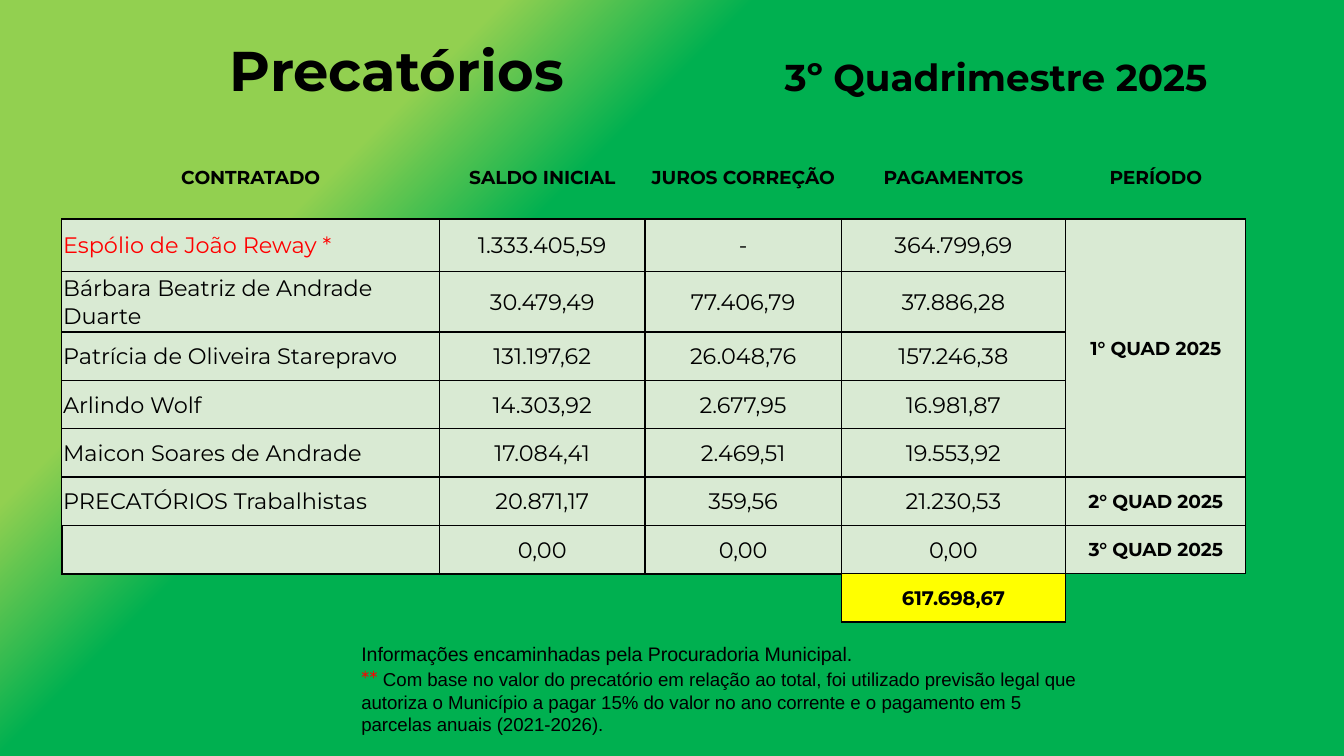
from dataclasses import dataclass

from lxml import etree
from pptx import Presentation
from pptx.dml.color import RGBColor
from pptx.enum.text import MSO_ANCHOR as Anchor, PP_ALIGN as Align
from pptx.oxml.ns import qn
from pptx.util import Inches, Pt


@dataclass(frozen=True)
class Theme:
    lime: str = "92D050"
    green: str = "00B050"
    ink: str = "000000"
    red: str = "FF0000"
    cell: str = "D9EAD3"
    total: str = "FFFF00"
    sans: str = "Montserrat"
    note_font: str = "Arial"
    title: float = 30
    subtitle: float = 20
    body: float = 12
    label: float = 10
    emphasis: float = 10.5
    mark: float = 11
    thin: float = 0.75
    thick: float = 1


THEME = Theme()
NO_STYLE = "{2D5ABB26-0587-4C30-8999-92F81FD0307C}"
COLUMN_WIDTHS = [2.81, 1.53, 1.46, 1.67, 1.34]
ROW_HEIGHTS = [0.64, 0.39, 0.45] + [0.36] * 6
ROWS = [
    ["CONTRATADO", "SALDO INICIAL", "JUROS CORREÇÃO", "PAGAMENTOS", "PERÍODO"],
    ["Espólio de João Reway *", "1.333.405,59", "-", "364.799,69", "1° QUAD 2025"],
    ["Bárbara Beatriz de Andrade Duarte", "30.479,49", "77.406,79", "37.886,28", ""],
    ["Patrícia de Oliveira Starepravo", "131.197,62", "26.048,76", "157.246,38", ""],
    ["Arlindo Wolf", "14.303,92", "2.677,95", "16.981,87", ""],
    ["Maicon Soares de Andrade", "17.084,41", "2.469,51", "19.553,92", ""],
    ["PRECATÓRIOS Trabalhistas", "20.871,17", "359,56", "21.230,53", "2° QUAD 2025"],
    ["", "0,00", "0,00", "0,00", "3° QUAD 2025"],
    ["", "", "", "617.698,67", ""],
]
NAME, BALANCE, PAYMENT, PERIOD = 0, 1, 3, 4
HEADER, FIRST, LAST_OF_FIRST_QUAD, THIRD_QUAD, TOTAL = 0, 1, 5, 7, 8


def style_run(run, size, color=THEME.ink, bold=False, font=THEME.sans):
    run.font.name = font
    run.font.size = Pt(size)
    run.font.bold = bold
    run.font.color.rgb = RGBColor.from_string(color)


def add_run(paragraph, text, size, **style):
    run = paragraph.add_run()
    run.text = text
    style_run(run, size, **style)


def add_text_frame(slide, box):
    frame = slide.shapes.add_textbox(*map(Inches, box)).text_frame
    frame.word_wrap = True
    return frame


def paint_background(slide):
    fill = slide.background.fill
    fill.gradient()
    fill.gradient_angle = 315
    stops = slide.element.find(".//" + qn("a:gsLst"))
    for stop in list(stops):
        stops.remove(stop)
    for percent, color in [(0, THEME.lime), (24, THEME.lime),
                           (36, THEME.green), (100, THEME.green)]:
        stop = etree.SubElement(stops, qn("a:gs"), pos=str(percent * 1000))
        etree.SubElement(stop, qn("a:srgbClr"), val=color)


def add_heading(slide, box):
    frame = add_text_frame(slide, box)
    frame.vertical_anchor = Anchor.BOTTOM
    heading = frame.paragraphs[0]
    tabs = etree.SubElement(heading._p.get_or_add_pPr(), qn("a:tabLst"))
    etree.SubElement(tabs, qn("a:tab"), pos=str(Inches(4.13)), algn="l")
    add_run(heading, "Precatórios\t", THEME.title, bold=True)
    add_run(heading, "3º Quadrimestre 2025", THEME.subtitle, bold=True)


def border_widths(row, column):
    """Line width for each visible side of a cell."""
    if row == HEADER:
        return {"B": THEME.thin}
    if row == TOTAL and column != PAYMENT:
        sides = {"T": THEME.thin if column == PERIOD else THEME.thick}
        if column == PAYMENT - 1:
            sides["R"] = THEME.thin
        if column == PERIOD:
            sides["L"] = THEME.thin
        return sides
    sides = dict.fromkeys("LRTB", THEME.thin)
    if row == THIRD_QUAD and column == NAME:
        sides.update(L=THEME.thick, R=THEME.thick, B=THEME.thick)
    elif row == THIRD_QUAD and column == BALANCE:
        sides.update(L=THEME.thick, B=THEME.thick)
    return sides


def draw_borders(cell, widths):
    properties = cell._tc.get_or_add_tcPr()
    for index, side in enumerate("LRTB"):
        line = etree.Element(qn(f"a:ln{side}"), w=str(Pt(widths.get(side, 0))))
        if side in widths:
            solid = etree.SubElement(line, qn("a:solidFill"))
            etree.SubElement(solid, qn("a:srgbClr"), val=THEME.ink)
        else:
            etree.SubElement(line, qn("a:noFill"))
        properties.insert(index, line)


def fill_cell(cell, row, column):
    if row == TOTAL and column == PAYMENT:
        color = THEME.total
    else:
        color = None if row in (HEADER, TOTAL) else THEME.cell
    if color:
        cell.fill.solid()
        cell.fill.fore_color.rgb = RGBColor.from_string(color)
    else:
        cell.fill.background()


def write_cell(cell, row, column):
    side, top, bottom = (0.03, 0.02, 0.02) if row == HEADER else (0.01, 0.01, 0)
    cell.margin_left = cell.margin_right = Inches(side)
    cell.margin_top, cell.margin_bottom = Inches(top), Inches(bottom)
    cell.vertical_anchor = Anchor.MIDDLE
    if not ROWS[row][column]:
        return
    paragraph = cell.text_frame.paragraphs[0]
    if row == HEADER:
        paragraph.line_spacing = 1.15
    if row == HEADER or column != NAME:
        paragraph.alignment = Align.CENTER
    bold = row in (HEADER, TOTAL) or column == PERIOD
    size = THEME.emphasis if row == TOTAL else THEME.label if bold else THEME.body
    color = THEME.red if (row, column) == (FIRST, NAME) else THEME.ink
    add_run(paragraph, ROWS[row][column], size, color=color, bold=bold)


def add_debt_table(slide, box):
    frame = slide.shapes.add_table(len(ROWS), len(COLUMN_WIDTHS), *map(Inches, box))
    table = frame.table
    table.first_row = table.horz_banding = False
    table._tbl.tblPr.find(qn("a:tableStyleId")).text = NO_STYLE
    for column, width in zip(table.columns, COLUMN_WIDTHS):
        column.width = Inches(width)
    for row, height in zip(table.rows, ROW_HEIGHTS):
        row.height = Inches(height)
    for row in range(len(ROWS)):
        for column in range(len(COLUMN_WIDTHS)):
            cell = table.cell(row, column)
            write_cell(cell, row, column)
            fill_cell(cell, row, column)
            draw_borders(cell, border_widths(row, column))
    table.cell(FIRST, PERIOD).merge(table.cell(LAST_OF_FIRST_QUAD, PERIOD))
    table.cell(TOTAL, NAME).merge(table.cell(TOTAL, PAYMENT - 1))


def add_notes_text(slide, box):
    frame = add_text_frame(slide, box)
    add_run(frame.paragraphs[0], "Informações encaminhadas pela Procuradoria Municipal.",
            THEME.emphasis, font=THEME.note_font)
    footnote = frame.add_paragraph()
    add_run(footnote, "** ", THEME.mark, color=THEME.red)
    add_run(footnote, "Com base no valor do precatório em relação ao total, foi utilizado "
            "previsão legal que autoriza o Município a pagar 15% do valor no ano corrente "
            "e o pagamento em 5 parcelas anuais (2021-2026).",
            THEME.label, font=THEME.note_font)


def main():
    deck = Presentation()
    deck.slide_width = Inches(10)
    deck.slide_height = deck.slide_width * 9 // 16
    slide = deck.slides.add_slide(deck.slide_layouts[6])
    paint_background(slide)
    add_heading(slide, (1.61, 0, 7.55, 0.81))
    add_debt_table(slide, (0.46, 0.99, sum(COLUMN_WIDTHS), sum(ROW_HEIGHTS)))
    add_notes_text(slide, (2.59, 4.73, 5.57, 0.8))
    deck.save("out.pptx")


if __name__ == "__main__":
    main()
